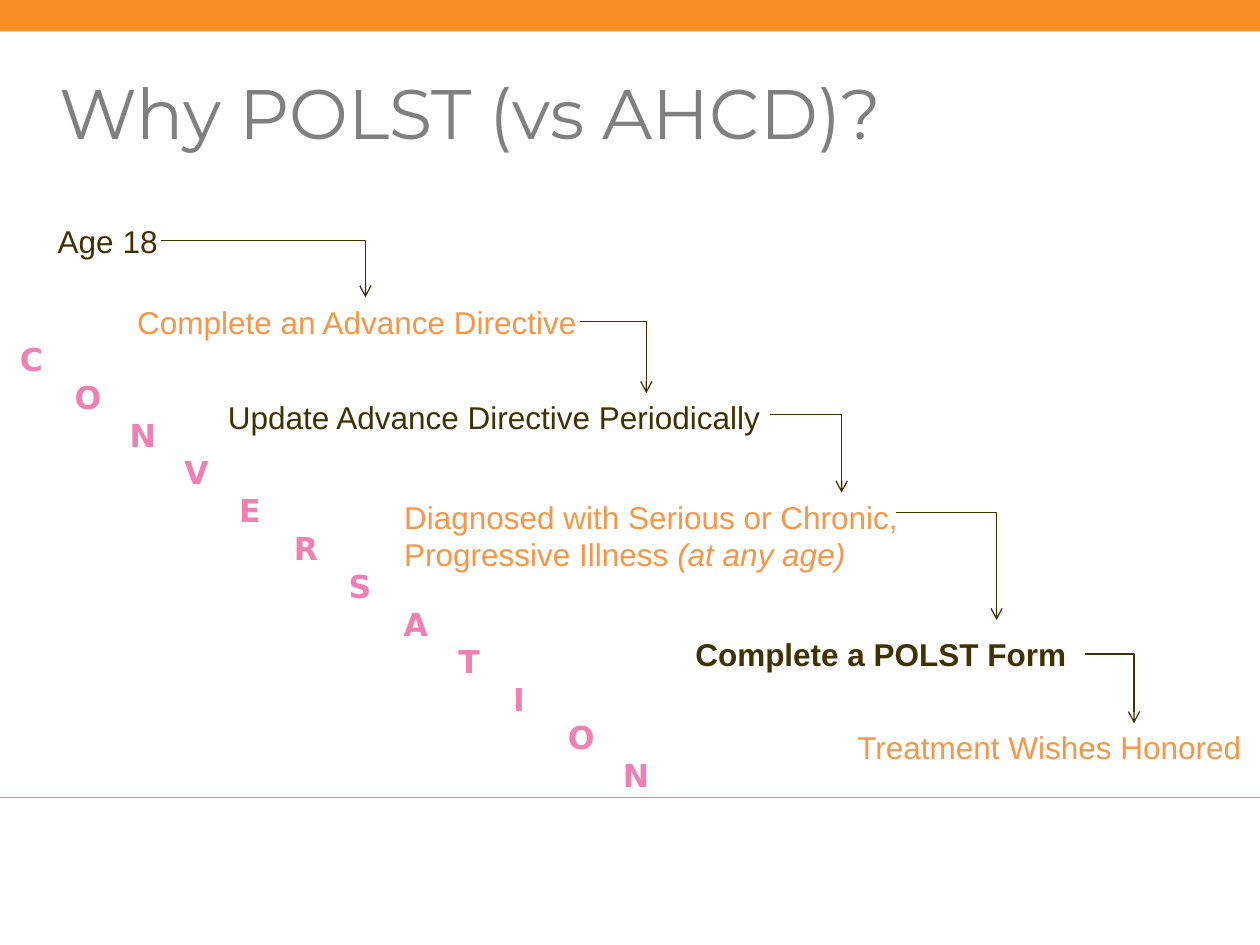
from dataclasses import dataclass

from lxml.etree import SubElement
from pptx import Presentation
from pptx.dml.color import RGBColor
from pptx.enum.shapes import MSO_CONNECTOR, MSO_SHAPE
from pptx.enum.text import MSO_ANCHOR, MSO_AUTO_SIZE, PP_ALIGN
from pptx.oxml.ns import qn
from pptx.util import Inches, Pt


@dataclass(frozen=True)
class Theme:
    accent: RGBColor = RGBColor(0xF7, 0x8F, 0x22)
    orange: RGBColor = RGBColor(0xF7, 0x96, 0x46)
    brown: RGBColor = RGBColor(0x41, 0x30, 0x00)
    pink: RGBColor = RGBColor(0xEE, 0x80, 0xB3)
    gray: RGBColor = RGBColor(0x80, 0x80, 0x80)
    title_font: str = "Montserrat"
    body_font: str = "Arial"
    letter_font: str = "DejaVu Sans"
    title_size: int = 40
    body_size: int = 18


class SlideBuilder:
    def __init__(self, slide, theme):
        self.slide = slide
        self.theme = theme

    def style(self, paragraph, font, size, color, bold=False):
        paragraph.font.name = font
        paragraph.font.size = Pt(size)
        paragraph.font.color.rgb = color
        paragraph.font.bold = bold

    def title(self, text, left, top, width, height):
        title = self.slide.shapes.title
        title.left, title.top = Inches(left), Inches(top)
        title.width, title.height = Inches(width), Inches(height)
        frame = title.text_frame
        frame.text = text
        frame.vertical_anchor = MSO_ANCHOR.TOP
        frame.auto_size = MSO_AUTO_SIZE.NONE
        paragraph = frame.paragraphs[0]
        paragraph.alignment = PP_ALIGN.LEFT
        self.style(paragraph, self.theme.title_font, self.theme.title_size, self.theme.gray)

    def bar(self, left, top, width, height):
        shape = self.slide.shapes.add_shape(
            MSO_SHAPE.RECTANGLE, Inches(left), Inches(top), Inches(width), Inches(height))
        shape.shadow.inherit = False
        shape.fill.solid()
        shape.fill.fore_color.rgb = self.theme.accent
        shape.line.fill.background()

    def text_box(self, left, top, width, height):
        box = self.slide.shapes.add_textbox(
            Inches(left), Inches(top), Inches(width), Inches(height))
        box.text_frame.word_wrap = True
        return box.text_frame

    def step(self, text, place, color, bold=False, note="", alignment=PP_ALIGN.LEFT):
        paragraph = self.text_box(*place).paragraphs[0]
        paragraph.alignment = alignment
        paragraph.add_run().text = text
        if note:
            run = paragraph.add_run()
            run.text = note
            run.font.italic = True
        self.style(paragraph, self.theme.body_font, self.theme.body_size, color, bold)

    def diagonal_word(self, word, place, indent, pitch):
        frame = self.text_box(*place)
        for index, letter in enumerate(word):
            paragraph = frame.paragraphs[0] if index == 0 else frame.add_paragraph()
            paragraph.text = letter
            paragraph.line_spacing = Pt(pitch)
            properties = paragraph._p.get_or_add_pPr()
            properties.set("marL", str(Inches(indent * index)))
            properties.set("indent", "0")
            self.style(paragraph, self.theme.letter_font, self.theme.body_size,
                       self.theme.pink, bold=True)

    def line(self, start, end, color, width, kind=MSO_CONNECTOR.STRAIGHT):
        connector = self.slide.shapes.add_connector(
            kind, *(Inches(value) for value in (*start, *end)))
        connector.line.color.rgb = color
        connector.line.width = Pt(width)
        SubElement(connector._element.spPr, qn("a:effectLst"))
        return connector

    def elbow_arrow(self, start, end):
        """Run right from the start, then down to an open arrowhead."""
        connector = self.line(start, end, self.theme.brown, 0.75, MSO_CONNECTOR.ELBOW)
        properties = connector._element.spPr
        properties.find(qn("a:prstGeom")).set("prst", "bentConnector2")
        SubElement(properties.find(qn("a:ln")), qn("a:tailEnd"), type="arrow")


def main():
    theme = Theme()
    presentation = Presentation()
    presentation.slide_width, presentation.slide_height = Inches(10), Inches(7.5)
    title_only = presentation.slide_layouts[5]
    builder = SlideBuilder(presentation.slides.add_slide(title_only), theme)

    # Frame and title
    builder.bar(0, 0, 10, 0.25)
    builder.line((0, 6.33), (10, 6.33), theme.accent, 1)
    builder.title("Why POLST (vs AHCD)?", 0.37, 0.5, 9, 0.83)

    # Steps, from adulthood to end of life
    builder.step("Age 18", (0.36, 1.71, 1.08, 0.4), theme.brown)
    builder.step("Complete an Advance Directive", (0.99, 2.36, 3.84, 0.4), theme.orange)
    builder.step("Update Advance Directive Periodically", (1.71, 3.11, 4.49, 0.4), theme.brown)
    builder.step("Diagnosed with Serious or Chronic, Progressive Illness ",
                 (3.11, 3.9, 4.76, 0.7), theme.orange, note="(at any age)")
    builder.step("Complete a POLST Form", (5.42, 4.99, 3.19, 0.41), theme.brown, bold=True)
    builder.step("Treatment Wishes Honored", (6.47, 5.73, 3.48, 0.4), theme.orange,
                 alignment=PP_ALIGN.RIGHT)

    # Arrows between the steps
    for start, end in (
        ((1.28, 1.91), (2.9, 2.36)),
        ((4.6, 2.55), (5.13, 3.12)),
        ((6.11, 3.29), (6.68, 3.91)),
        ((7.11, 4.07), (7.91, 4.92)),
        ((8.61, 5.19), (9, 5.74)),
    ):
        builder.elbow_arrow(start, end)

    # Conversation running alongside every step
    builder.diagonal_word("CONVERSATION", (0.06, 2.65, 5.3, 3.7), indent=0.435, pitch=21.6)

    presentation.save("out.pptx")


if __name__ == "__main__":
    main()
